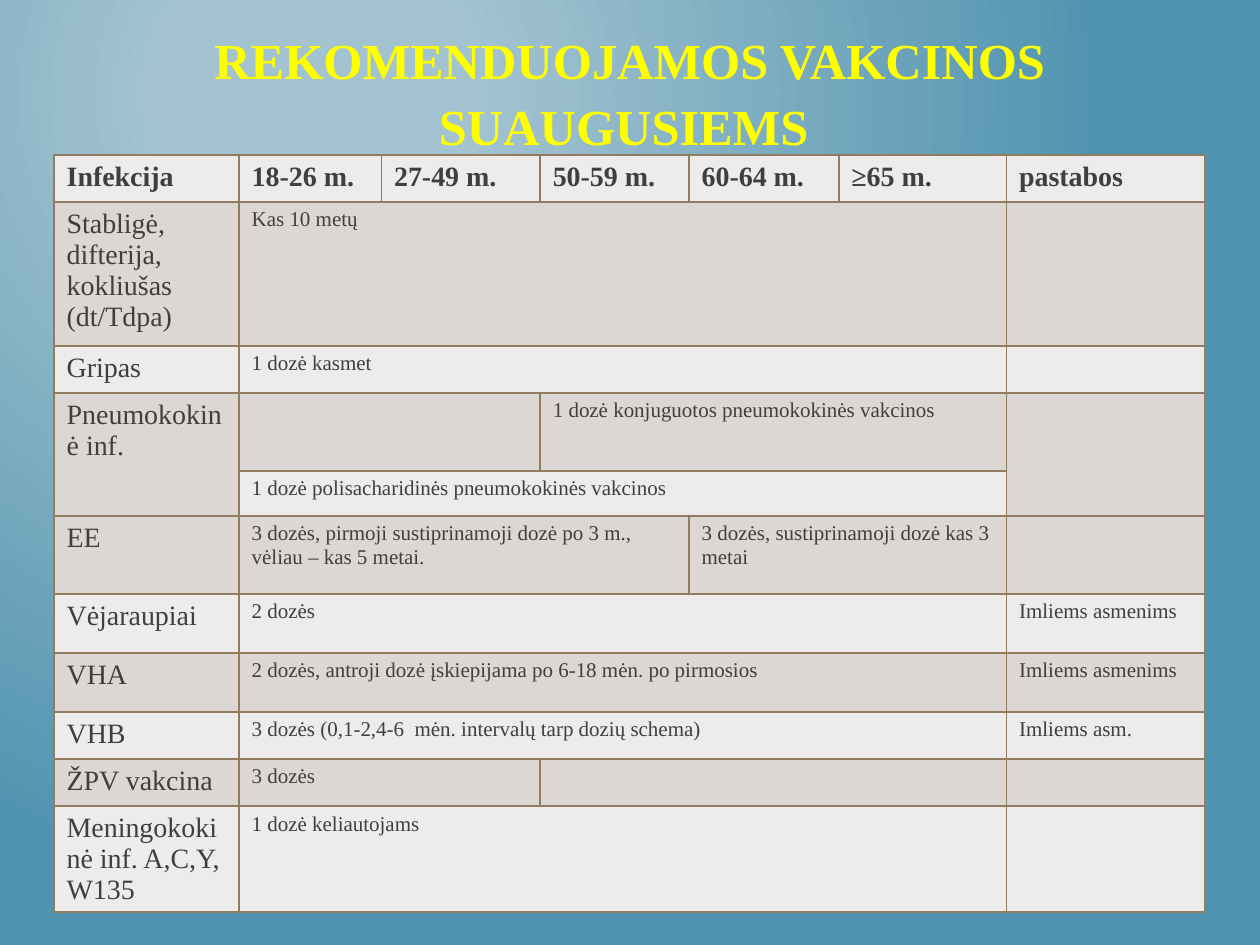
from lxml.etree import fromstring
from pptx import Presentation
from pptx.dml.color import RGBColor as RGB
from pptx.enum.text import MSO_ANCHOR as ANCHOR, PP_ALIGN as ALIGN
from pptx.util import Cm, Pt

NS = 'xmlns:a="http://schemas.openxmlformats.org/drawingml/2006/main"'
FONT = "Times New Roman"
COLORS = {
    "light": "EEECEA",
    "dark": "DCD7D2",
    "border": "927C61",
    "text": "3F3F3F",
    "title": "FFFF00",
    "bg_inner": "A3C3D1",
    "bg_outer": "5194AF",
}
COL_WIDTHS = [3.73, 2.87, 3.2, 3, 3.02, 3.38, 3.99]
ROW_HEIGHTS = [0.95, 2.9, 0.95, 1.57, 0.91, 1.57, 1.19, 1.19, 0.95, 0.95, 2.13]
HEADERS = ["Infekcija", "18-26 m.", "27-49 m.", "50-59 m.", "60-64 m.", "≥65 m.", "pastabos"]
NOTE_COL = len(HEADERS) - 1

# infection, doses as (number of age columns, text), note
VACCINES = [
    ("Stabligė, difterija, kokliušas (dt/Tdpa)", [(5, "Kas 10 metų")], ""),
    ("Gripas", [(5, "1 dozė kasmet")], ""),
    ("Pneumokokinė inf.", [(2, ""), (3, "1 dozė konjuguotos pneumokokinės vakcinos")], ""),
    ("", [(5, "1 dozė polisacharidinės pneumokokinės vakcinos")], ""),
    ("EE", [(3, "3 dozės, pirmoji sustiprinamoji dozė po 3 m., vėliau – kas 5 metai."),
            (2, "3 dozės, sustiprinamoji dozė kas 3 metai")], ""),
    ("Vėjaraupiai", [(5, "2 dozės")], "Imliems asmenims"),
    ("VHA", [(5, "2 dozės, antroji dozė įskiepijama po 6-18 mėn. po pirmosios")], "Imliems asmenims"),
    ("VHB", [(5, "3 dozės (0,1-2,4-6  mėn. intervalų tarp dozių schema)")], "Imliems asm."),
    ("ŽPV vakcina", [(2, "3 dozės"), (3, "")], ""),
    ("Meningokokinė inf. A,C,Y, W135", [(5, "1 dozė keliautojams")], ""),
]
PNEUMO_ROW = 3


def style_font(font, size, color, bold=False):
    font.name = FONT
    font.size = Pt(size)
    font.bold = bold
    font.color.rgb = RGB.from_string(COLORS[color])


def set_background(s):
    fill = s.background.fill
    fill.gradient()
    grad = next(s._element.iter("{*}gradFill"))
    grad.getparent().replace(grad, fromstring(
        f'<a:gradFill {NS} rotWithShape="1"><a:gsLst>'
        f'<a:gs pos="20000"><a:srgbClr val="{COLORS["bg_inner"]}"/></a:gs>'
        f'<a:gs pos="100000"><a:srgbClr val="{COLORS["bg_outer"]}"/></a:gs></a:gsLst>'
        '<a:path path="circle"><a:fillToRect l="50000" t="20000" r="100000" b="100000"/>'
        '</a:path></a:gradFill>'))


def add_title(s, text):
    sp = s.shapes.title
    sp.left, sp.top, sp.width, sp.height = Cm(1.7), Cm(0.33), Cm(22), Cm(2)
    tf = sp.text_frame
    tf.text = text
    tf.word_wrap = True
    tf.vertical_anchor = ANCHOR.TOP
    p = tf.paragraphs[0]
    p.alignment = ALIGN.CENTER
    p.line_spacing = 1.1
    style_font(p.runs[0].font, 28.8, "title", True)


def style_cell(cell, band):
    cell.fill.solid()
    cell.fill.fore_color.rgb = RGB.from_string(COLORS[band])
    tc_pr = cell._tc.get_or_add_tcPr()
    for i, side in enumerate("LRTB"):
        tc_pr.insert(i, fromstring(
            f'<a:ln{side} {NS} w="12700"><a:solidFill>'
            f'<a:srgbClr val="{COLORS["border"]}"/></a:solidFill></a:ln{side}>'))


def write_cell(cell, text, size, bold=False):
    cell.text_frame.text = text
    p = cell.text_frame.paragraphs[0]
    p.font.size = Pt(size)
    for r in p.runs:
        style_font(r.font, size, "text", bold)


def add_vaccine_table(s):
    table = s.shapes.add_table(len(ROW_HEIGHTS), len(COL_WIDTHS), Cm(1.09), Cm(3.12),
                               Cm(sum(COL_WIDTHS)), Cm(sum(ROW_HEIGHTS))).table
    table.first_row = table.horz_banding = False
    for col, width in zip(table.columns, COL_WIDTHS):
        col.width = Cm(width)
    for i, (row, height) in enumerate(zip(table.rows, ROW_HEIGHTS)):
        row.height = Cm(height)
        for cell in row.cells:
            style_cell(cell, "dark" if i % 2 else "light")
            write_cell(cell, "", 12)

    for c, header in enumerate(HEADERS):
        write_cell(table.cell(0, c), header, 16, True)
    for i, (infection, doses, note) in enumerate(VACCINES, 1):
        write_cell(table.cell(i, 0), infection, 16)
        write_cell(table.cell(i, NOTE_COL), note, 12)
        c = 1
        for span, text in doses:
            cell = table.cell(i, c)
            cell.merge(table.cell(i, c + span - 1))
            write_cell(cell, text, 12)
            c += span
    for c in (0, NOTE_COL):
        table.cell(PNEUMO_ROW, c).merge(table.cell(PNEUMO_ROW + 1, c))


def main():
    prs = Presentation()
    prs.slide_width, prs.slide_height = Cm(25.4), Cm(19.05)
    s = prs.slides.add_slide(prs.slide_layouts[5])
    set_background(s)
    add_title(s, "REKOMENDUOJAMOS VAKCINOS SUAUGUSIEMS ")
    add_vaccine_table(s)
    prs.save("out.pptx")


if __name__ == "__main__":
    main()
